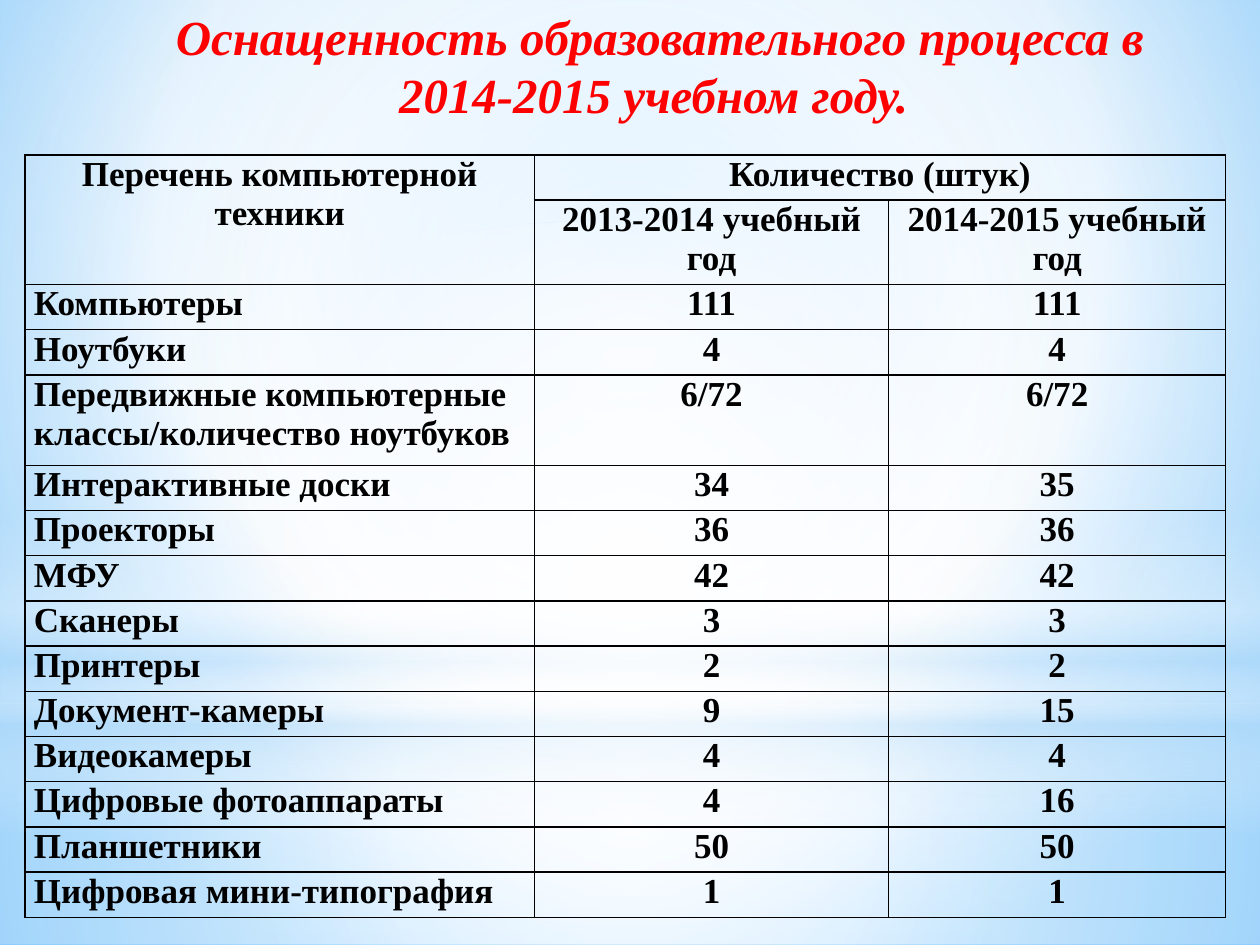
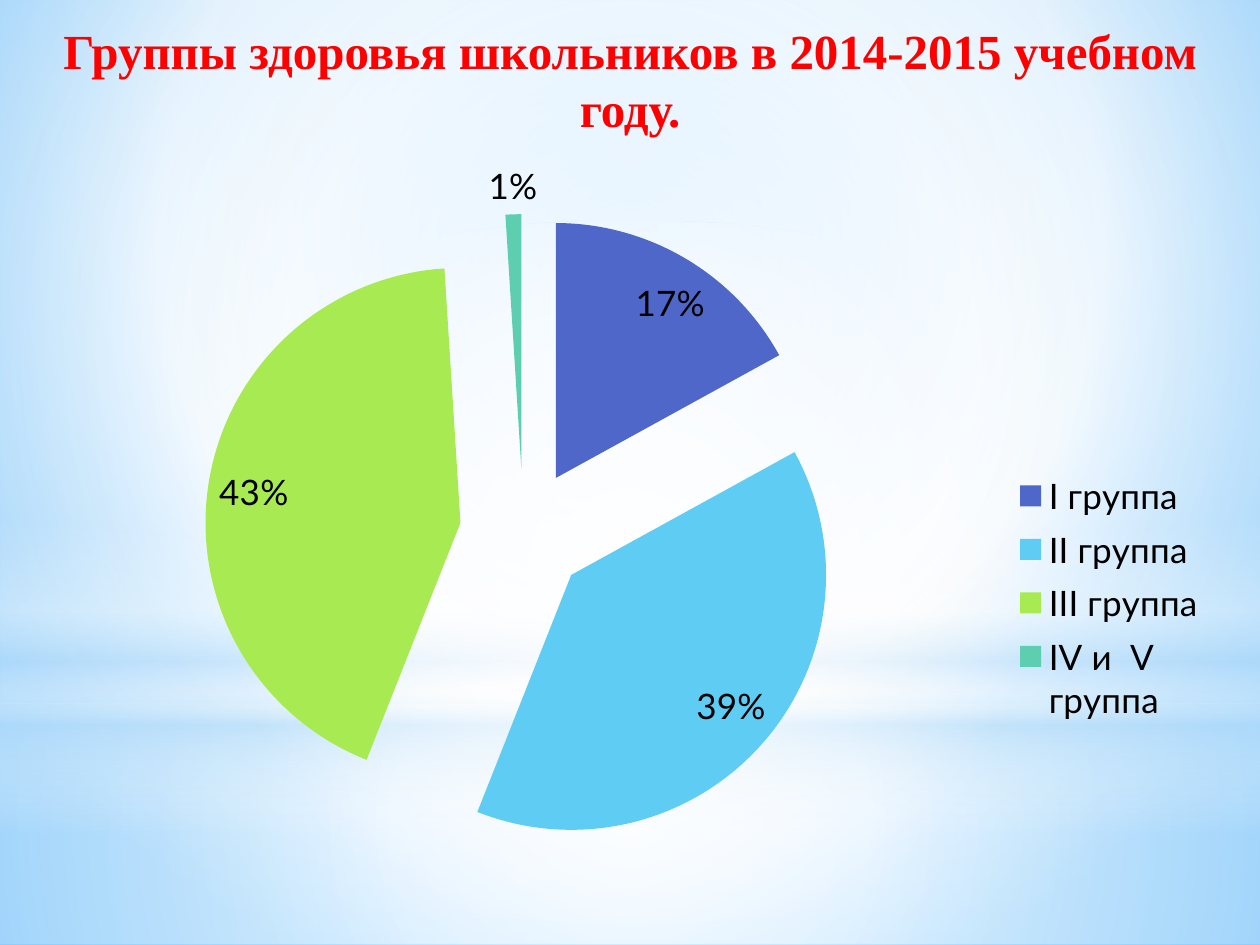
from dataclasses import dataclass

from lxml.etree import SubElement
from pptx import Presentation
from pptx.chart.data import CategoryChartData as ChartData
from pptx.dml.color import RGBColor as Color
from pptx.enum.chart import XL_CHART_TYPE as ChartType
from pptx.enum.chart import XL_LABEL_POSITION as LabelSpot
from pptx.enum.chart import XL_LEGEND_POSITION as LegendSpot
from pptx.enum.shapes import MSO_SHAPE as Preset
from pptx.enum.text import PP_ALIGN as Align
from pptx.oxml.ns import qn
from pptx.util import Pt


@dataclass(frozen=True)
class Theme:
    """Colours, fonts and type sizes of the deck."""
    title_color: str = "FF0000"
    ink: str = "000000"
    white: str = "FFFFFF"
    haze: str = "B4DCFA"
    sky_edge: str = "5BB9FF"
    sky_core: str = "9ED5FF"
    slices: tuple = ("4E67C8", "5ECCF3", "A7EA52", "5DCEAF")
    serif: str = "Times New Roman"
    sans: str = "Lato"
    title_size: int = 28
    body_size: int = 20


THEME = Theme()
WIDTH, HEIGHT = 720, 540
CENTER = (50, 50, 50, 50)
SKY = [(0, THEME.sky_core, 100), (60, THEME.white, 100), (100, THEME.sky_edge, 100)]
BACKDROP = [
    (Preset.RECTANGLE, 402, 138, CENTER,
     [(0, THEME.white, 91), (37, THEME.white, 76), (100, THEME.haze, 79)]),
    (Preset.RECTANGLE, 0, 402, CENTER,
     [(0, THEME.white, 89), (48, THEME.white, 62), (100, THEME.haze, 79)]),
    (Preset.RECTANGLE, 297, 180, None,
     [(0, THEME.white, 0), (29, THEME.white, 30), (45, THEME.haze, 40),
      (55, THEME.white, 26), (65, THEME.haze, 60), (100, THEME.white, 0)]),
    (Preset.OVAL, 126, 402, CENTER, [(0, THEME.white, 100), (56, THEME.white, 0)]),
]
EQUIPMENT = [
    ("Компьютеры", "111", "111"),
    ("Ноутбуки", "4", "4"),
    ("Передвижные компьютерные классы/количество ноутбуков", "6/72", "6/72"),
    ("Интерактивные доски", "34", "35"),
    ("Проекторы", "36", "36"),
    ("МФУ", "42", "42"),
    ("Сканеры", "3", "3"),
    ("Принтеры", "2", "2"),
    ("Документ-камеры", "9", "15"),
    ("Видеокамеры", "4", "4"),
    ("Цифровые фотоаппараты", "4", "16"),
    ("Планшетники", "50", "50"),
    ("Цифровая мини-типография", "1", "1"),
]
HEADER = [
    ("Перечень компьютерной техники", "Количество (штук)", ""),
    ("", "2013-2014 учебный год", "2014-2015 учебный год"),
]
HEALTH_GROUPS = {"I группа": 17, "II группа": 39, "III группа": 43, "IV и  V группа ": 1}
LEGEND_AREA = {"x": 0.82, "y": 0.44, "w": 0.18, "h": 0.37}


def apply(target, formats):
    """Set each attribute in the dict on the target."""
    for name, value in formats.items():
        setattr(target, name, value)


def style_font(font, color, **formats):
    """Set the colour and the other values of a font."""
    apply(font, formats)
    font.color.rgb = Color.from_string(color)


def fill_gradient(fill, holder, stops, focus):
    """Fill with a circular gradient, or a vertical one if there is no focus."""
    fill.solid()
    solid = holder.find(qn("a:solidFill"))
    gradient = SubElement(holder, qn("a:gradFill"), rotWithShape="1")
    solid.getparent().replace(solid, gradient)
    stop_list = SubElement(gradient, qn("a:gsLst"))
    for position, color, opacity in stops:
        stop = SubElement(stop_list, qn("a:gs"), pos=str(position * 1000))
        tone = SubElement(stop, qn("a:srgbClr"), val=color)
        SubElement(tone, qn("a:alpha"), val=str(opacity * 1000))
    if focus:
        path = SubElement(gradient, qn("a:path"), path="circle")
        sides = {side: str(share * 1000) for side, share in zip("ltrb", focus)}
        SubElement(path, qn("a:fillToRect"), sides)
    else:
        SubElement(gradient, qn("a:lin"), ang="5400000", scaled="0")


def add_page(deck):
    """Add a blank page with the sky backdrop."""
    page = deck.slides.add_slide(deck.slide_layouts[6])
    sky = page.background.fill
    sky.solid()
    fill_gradient(sky, page.element.find(".//" + qn("p:bgPr")), SKY, (20, 10, 20, 60))
    for preset, top, height, focus, stops in BACKDROP:
        glow = page.shapes.add_shape(preset, 0, Pt(top), Pt(WIDTH), Pt(height))
        glow.shadow.inherit = False
        glow.line.fill.background()
        fill_gradient(glow.fill, glow.element.spPr, stops, focus)
    return page


def add_title(page, text, left, top, width, italic=False):
    """Add a centred red title."""
    box = page.shapes.add_textbox(Pt(left), Pt(top), Pt(width), Pt(75))
    box.text_frame.word_wrap = True
    para = box.text_frame.paragraphs[0]
    para.alignment = Align.CENTER
    span = para.add_run()
    span.text = text
    style_font(span.font, THEME.title_color, name=THEME.serif,
               size=Pt(THEME.title_size), bold=True, italic=italic)


def draw_borders(cell):
    """Draw a thin line on each side of a cell."""
    properties = cell._tc.get_or_add_tcPr()
    for index, side in enumerate(("lnL", "lnR", "lnT", "lnB")):
        line = SubElement(properties, qn("a:" + side), w=str(Pt(1)))
        properties.insert(index, line)
        paint = SubElement(line, qn("a:solidFill"))
        SubElement(paint, qn("a:srgbClr"), val=THEME.ink)


def write_cell(cell, text, alignment):
    """Write and format one table cell."""
    apply(cell, {"margin_left": Pt(5), "margin_right": Pt(5),
                 "margin_top": 0, "margin_bottom": 0})
    cell.fill.background()
    draw_borders(cell)
    para = cell.text_frame.paragraphs[0]
    para.alignment = alignment
    if text:
        span = para.add_run()
        span.text = text
        style_font(span.font, THEME.ink, name=THEME.serif,
                   size=Pt(THEME.body_size), bold=True)


def add_equipment_table(page):
    """Add the table of equipment by school year."""
    rows = HEADER + EQUIPMENT
    widths = (291, 202.5, 192.5)
    row_height = 25.85
    heights = {1: 48.3, 4: 2 * row_height}
    frame = page.shapes.add_table(len(rows), len(widths), Pt(14.4), Pt(88.5),
                                  Pt(sum(widths)), Pt(436))
    table = frame.table
    apply(table, {"first_row": False, "horz_banding": False})
    for column, width in zip(table.columns, widths):
        column.width = Pt(width)
    for row_index, texts in enumerate(rows):
        table.rows[row_index].height = Pt(heights.get(row_index, row_height))
        for column_index, text in enumerate(texts):
            is_name = column_index == 0 and row_index >= len(HEADER)
            write_cell(table.cell(row_index, column_index), text,
                       Align.LEFT if is_name else Align.CENTER)
    table.cell(0, 0).merge(table.cell(1, 0))
    table.cell(0, 1).merge(table.cell(0, 2))


def place_legend(legend):
    """Give the legend a fixed area, in shares of the chart."""
    layout = legend._element.find(qn("c:layout"))
    if layout is None:
        layout = SubElement(legend._element, qn("c:layout"))
        legend._element.find(qn("c:legendPos")).addnext(layout)
    manual = SubElement(layout, qn("c:manualLayout"))
    for side in "xy":
        SubElement(manual, qn(f"c:{side}Mode"), val="edge")
    for side, share in LEGEND_AREA.items():
        SubElement(manual, qn("c:" + side), val=str(share))


def add_health_chart(page):
    """Add the exploded pie of health groups."""
    data = ChartData()
    data.categories = list(HEALTH_GROUPS)
    data.add_series("Series 1", list(HEALTH_GROUPS.values()))
    chart = page.shapes.add_chart(ChartType.PIE, Pt(25), Pt(83.5),
                                  Pt(669), Pt(413), data).chart
    apply(chart, {"has_title": False, "has_legend": True})
    style_font(chart.font, THEME.ink, name=THEME.sans, size=Pt(10))
    apply(chart.legend, {"position": LegendSpot.RIGHT, "include_in_layout": False})
    style_font(chart.legend.font, THEME.ink, name=THEME.sans, size=Pt(THEME.body_size))
    place_legend(chart.legend)
    plot = chart.plots[0]
    apply(plot, {"vary_by_categories": True, "has_data_labels": True})
    apply(plot.data_labels, {"show_percentage": True, "show_value": False,
                             "number_format": "0%", "number_format_is_linked": False,
                             "position": LabelSpot.BEST_FIT})
    style_font(plot.data_labels.font, THEME.ink, name=THEME.sans,
               size=Pt(THEME.body_size))
    series = plot.series[0]
    for index, color in enumerate(THEME.slices):
        paint = series.points[index].format.fill
        paint.solid()
        paint.fore_color.rgb = Color.from_string(color)
    explosion = SubElement(series._element, qn("c:explosion"), val="25")
    series._element.find(qn("c:dPt")).addprevious(explosion)


def main():
    """Build the two pages and save the deck."""
    deck = Presentation()
    apply(deck, {"slide_width": Pt(WIDTH), "slide_height": Pt(HEIGHT)})
    equipment = add_page(deck)
    add_title(equipment, "Оснащенность образовательного процесса в 2014-2015 учебном году. ",
              82, 0, 590, italic=True)
    add_equipment_table(equipment)
    health = add_page(deck)
    add_title(health, "Группы здоровья школьников в 2014-2015 учебном году.", 8.6, 8, 703)
    add_health_chart(health)
    deck.save("out.pptx")


if __name__ == "__main__":
    main()
